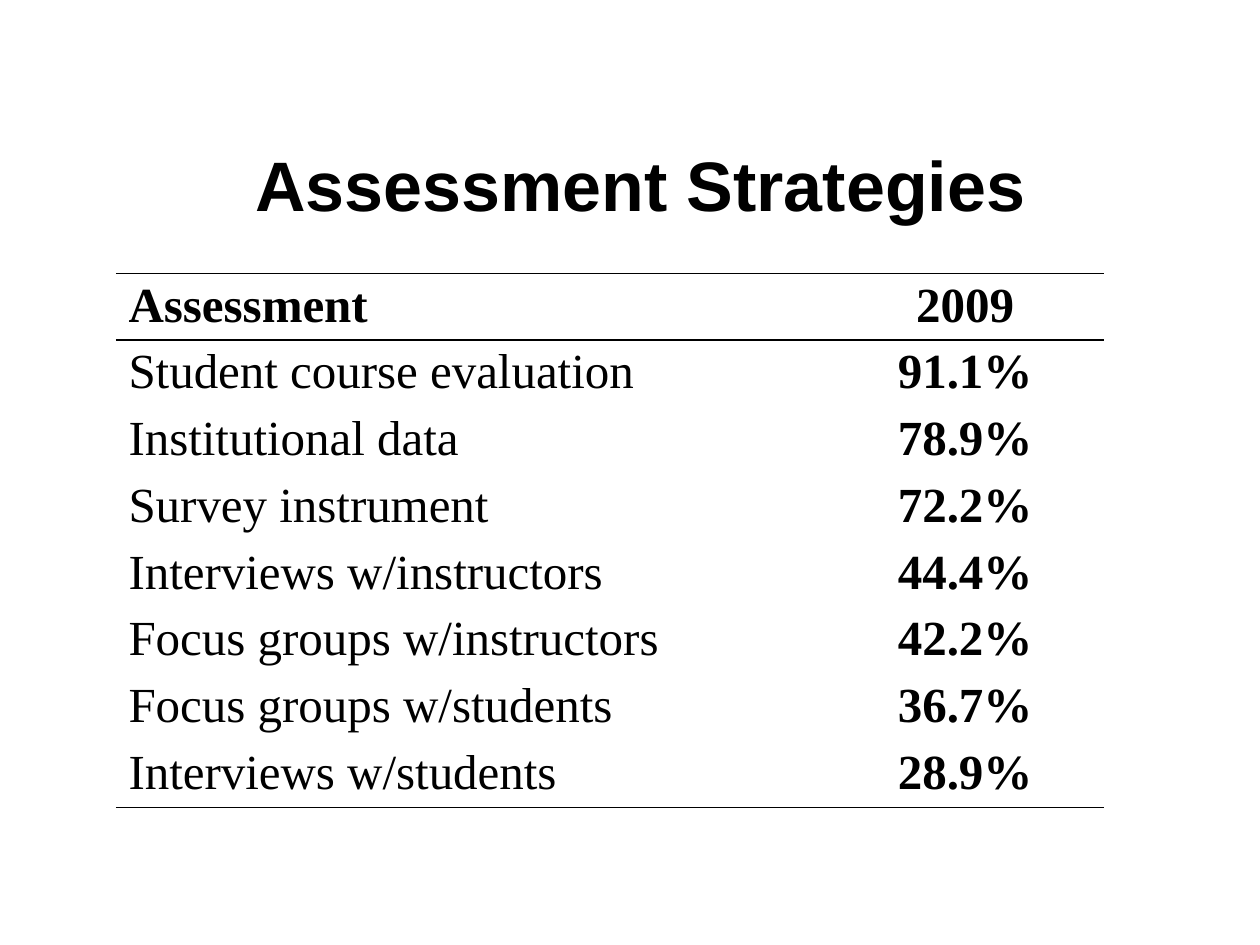
from dataclasses import dataclass

from lxml import etree
from pptx import Presentation
from pptx.dml.color import RGBColor
from pptx.enum.text import MSO_ANCHOR, PP_ALIGN
from pptx.oxml.ns import qn
from pptx.util import Inches, Pt

LEFT, CENTER = PP_ALIGN.LEFT, PP_ALIGN.CENTER
MIDDLE = MSO_ANCHOR.MIDDLE

ROWS = [
    ("Assessment", "2009"),
    ("Student course evaluation", "91.1%"),
    ("Institutional data", "78.9%"),
    ("Survey instrument", "72.2%"),
    ("Interviews w/instructors", "44.4%"),
    ("Focus groups w/instructors", "42.2%"),
    ("Focus groups w/students", "36.7%"),
    ("Interviews w/students", "28.9%"),
]


@dataclass(frozen=True)
class Theme:
    ink: str = "000000"
    head: str = "Arial"
    body: str = "Times New Roman"
    title: int = 40
    cell: int = 28
    rule: int = 1


class Deck:
    def __init__(self, prs, theme):
        self.theme = theme
        self.slide = prs.slides.add_slide(prs.slide_layouts[5])

    def style(self, para, face, size, bold, align):
        para.alignment = align
        font = para.font
        font.name, font.size, font.bold = face, Pt(size), bold
        font.color.rgb = RGBColor.from_string(self.theme.ink)

    def title(self, text, left, top, width, height):
        box = self.slide.shapes.title
        box.left, box.top = Inches(left), Inches(top)
        box.width, box.height = Inches(width), Inches(height)
        frame = box.text_frame
        frame.text = text
        frame.vertical_anchor = MIDDLE
        self.style(frame.paragraphs[0], self.theme.head, self.theme.title, True, CENTER)

    def border(self, cell, sides):
        """Rule the named sides (from L, R, T, B) and clear the others."""
        props = cell._tc.get_or_add_tcPr()
        for side in "LRTB":
            line = etree.SubElement(props, qn(f"a:ln{side}"), w=str(Pt(self.theme.rule)))
            if side in sides:
                fill = etree.SubElement(line, qn("a:solidFill"))
                etree.SubElement(fill, qn("a:srgbClr"), val=self.theme.ink)
            else:
                etree.SubElement(line, qn("a:noFill"))

    def table(self, rows, left, top, widths, height):
        """Draw a plain table ruled around its header and at its foot."""
        count = len(rows)
        table = self.slide.shapes.add_table(
            count, len(widths), Inches(left), Inches(top),
            Inches(sum(widths)), Inches(height * count)).table
        table.first_row = table.horz_banding = False
        for col, width in zip(table.columns, widths):
            col.width = Inches(width)
        sides = {0: "TB", 1: "T", count - 1: "B"}
        for i, row in enumerate(rows):
            table.rows[i].height = Inches(height)
            for j, text in enumerate(row):
                cell = table.cell(i, j)
                cell.text = text
                cell.margin_top = cell.margin_bottom = Inches(0.04)
                self.border(cell, sides.get(i, ""))
                cell.fill.background()
                self.style(cell.text_frame.paragraphs[0], self.theme.body,
                           self.theme.cell, i == 0 or j > 0, CENTER if j else LEFT)


def main():
    prs = Presentation()
    prs.slide_width, prs.slide_height = Inches(10), Inches(7.5)
    deck = Deck(prs, Theme())
    deck.title("Assessment Strategies", 0.83, 1, 8.5, 0.92)
    deck.table(ROWS, 0.92, 2.17, (5.64, 2.2), 0.53)
    prs.save("out.pptx")


if __name__ == "__main__":
    main()
